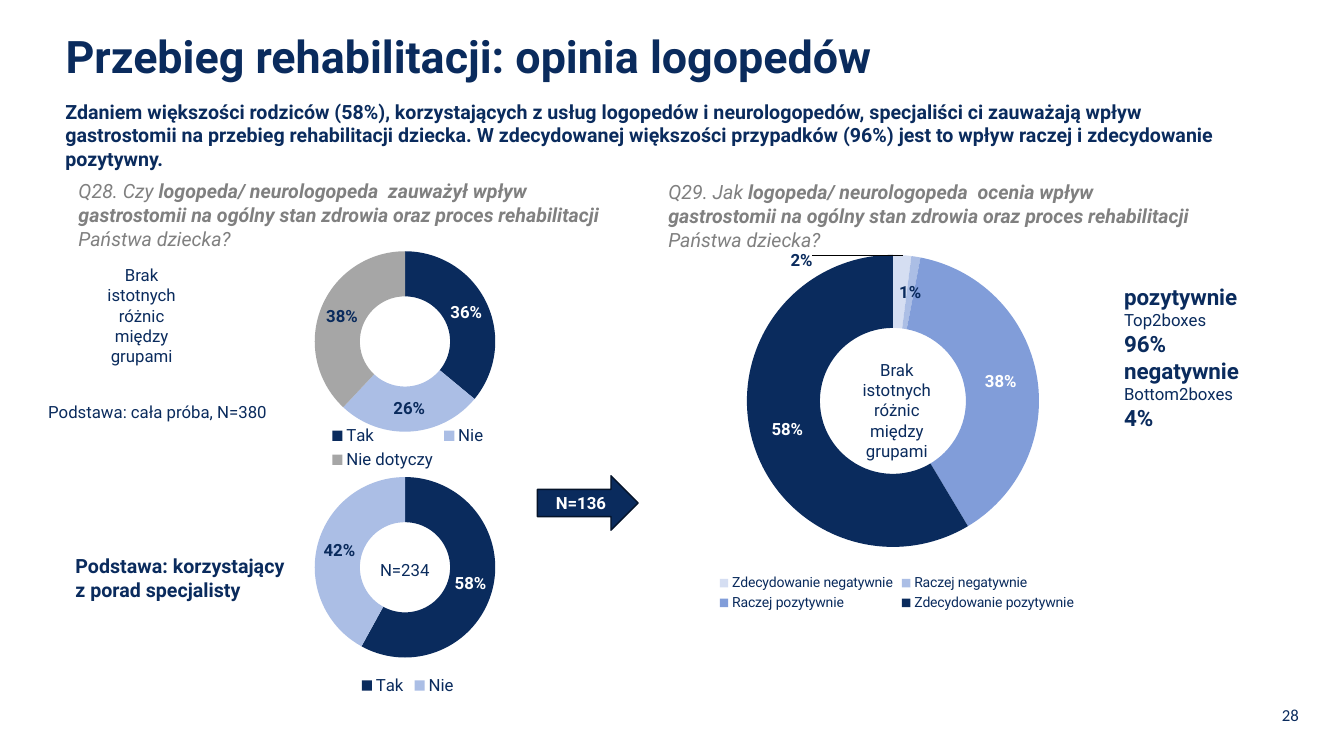
from lxml.etree import SubElement
from pptx import Presentation
from pptx.chart.data import CategoryChartData
from pptx.dml.color import RGBColor
from pptx.enum.chart import XL_CHART_TYPE, XL_LEGEND_POSITION
from pptx.enum.shapes import MSO_SHAPE
from pptx.enum.text import MSO_ANCHOR, PP_ALIGN
from pptx.oxml import parse_xml
from pptx.oxml.ns import nsdecls, qn
from pptx.util import Emu, Pt

PX = 9144
NAVY = RGBColor(0x0A, 0x2B, 0x5D)
EDGE = RGBColor(0x04, 0x13, 0x29)
GRAY = RGBColor(0x80, 0x80, 0x80)
SILVER = RGBColor(0xA6, 0xA6, 0xA6)
PALE = RGBColor(0xD5, 0xDE, 0xF2)
LIGHT = RGBColor(0xAB, 0xBE, 0xE5)
MEDIUM = RGBColor(0x81, 0x9D, 0xD9)
WHITE = RGBColor(0xFF, 0xFF, 0xFF)

LEFT, CENTER, RIGHT = PP_ALIGN.LEFT, PP_ALIGN.CENTER, PP_ALIGN.RIGHT
PLAIN = {"size": 12}
BOLD = {"size": 14, "bold": True}
BIG = {"size": 16, "bold": True}
ASK = {"size": 14, "color": GRAY, "italic": True}
ASK_BOLD = {**ASK, "bold": True}

TITLE = "Przebieg rehabilitacji: opinia logopedów"
SUMMARY = (
    "Zdaniem większości rodziców (58%), korzystających z usług logopedów i neurologopedów, "
    "specjaliści ci zauważają wpływ gastrostomii na przebieg rehabilitacji dziecka. "
    "W zdecydowanej większości przypadków (96%) jest to wpływ raczej i zdecydowanie pozytywny."
)
SUBJECT = " wpływ gastrostomii na ogólny stan zdrowia oraz proces rehabilitacji "
NO_DIFFERENCE = [[("Brak istotnych różnic między grupami", PLAIN)]]


def question(start, verb):
    return [[(start, ASK), ("logopeda/ neurologopeda  " + verb + SUBJECT, ASK_BOLD),
             ("Państwa dziecka?", ASK)]]


CHARTS = [
    ((668, 246, 443, 364), 10, [
        ("Zdecydowanie negatywnie", 0.02, PALE, NAVY),
        ("Raczej negatywnie", 0.01, LIGHT, NAVY),
        ("Raczej pozytywnie", 0.38, MEDIUM, WHITE),
        ("Zdecydowanie pozytywnie", 0.58, NAVY, WHITE)], {0: (-0.22, -0.085)}),
    ((240, 245, 329, 225), 12, [
        ("Tak", 0.36, NAVY, WHITE),
        ("Nie", 0.26, LIGHT, NAVY),
        ("Nie dotyczy", 0.38, SILVER, NAVY)], {}),
    ((240, 469, 329, 225), 12, [
        ("Tak", 0.58, NAVY, WHITE),
        ("Nie", 0.42, LIGHT, NAVY)], {}),
]
TEXTS = [
    ((55, 94, 1190, 81), LEFT, [[(SUMMARY, BOLD)]]),
    ((68, 173, 551, 81), LEFT, question("Q28. Czy ", "zauważył")),
    ((653, 174, 551, 81), LEFT, question("Q29. Jak ", "ocenia")),
    ((829, 352, 121, 91), CENTER, NO_DIFFERENCE),
    ((80, 258, 121, 91), CENTER, NO_DIFFERENCE),
    ((38, 394, 371, 30), LEFT, [[("Podstawa: cała próba, N=380", PLAIN)]]),
    ((341, 550, 121, 30), CENTER, [[("N=234", PLAIN)]]),
    ((65, 545, 257, 57), LEFT, [[("Podstawa: korzystający", BOLD)], [("z porad specjalisty", BOLD)]]),
    ((1105, 276, 160, 158), LEFT, [
        [("pozytywnie", BIG)], [("Top2boxes", PLAIN)], [("96%", BIG)],
        [("negatywnie", BIG)], [("Bottom2boxes", PLAIN)], [("4%", BIG)]]),
    ((998, 694, 300, 30), RIGHT, [[("28", {"size": 12, "name": "Calibri"})]]),
]


def place(box):
    return [Emu(length * PX) for length in box]


def style(font, values):
    values = {"name": "Roboto", "color": NAVY, "bold": False, **values}
    font.color.rgb = values.pop("color")
    values["size"] = Pt(values["size"])
    for name, value in values.items():
        setattr(font, name, value)


def write(frame, align, lines):
    frame.word_wrap = True
    for index, spans in enumerate(lines):
        para = frame.add_paragraph() if index else frame.paragraphs[0]
        para.alignment = align
        for text, values in spans:
            span = para.add_run()
            span.text = text
            style(span.font, values)


def manual_layout(**values):
    layout = parse_xml(f"<c:layout {nsdecls('c')}/>")
    manual = SubElement(layout, qn("c:manualLayout"))
    for name, value in values.items():
        SubElement(manual, qn("c:" + name)).set("val", str(value))
    return layout


def add_doughnut(page, box, legend_size, slices, shifts):
    data = CategoryChartData(number_format="0%")
    data.categories = [name for name, *rest in slices]
    data.add_series("Odpowiedzi", [value for name, value, *rest in slices])
    chart = page.shapes.add_chart(XL_CHART_TYPE.DOUGHNUT, *place(box), data).chart
    style(chart.font, {"size": 10, "name": "Calibri"})
    chart.has_title = False
    chart.has_legend = True
    chart.legend.position = XL_LEGEND_POSITION.BOTTOM
    chart.legend.include_in_layout = False
    style(chart.legend.font, {"size": legend_size})
    area = chart.plots[0]._element.getparent()
    for old in area.findall(qn("c:layout")):
        area.remove(old)
    area.insert(0, manual_layout(layoutTarget="inner", xMode="edge", yMode="edge",
                                 x=0.151, y=0.019, w=0.681, h=0.796))
    chart.plots[0].vary_by_categories = True
    series = chart.plots[0].series[0]
    labels = series.data_labels
    labels.show_value = True
    labels.number_format = "0%"
    labels.number_format_is_linked = False
    style(labels.font, {"size": 12, "bold": True})
    for index, (name, value, fill, ink) in enumerate(slices):
        point = series.points[index]
        point.format.fill.solid()
        point.format.fill.fore_color.rgb = fill
        style(point.data_label.font, {"size": 12, "bold": True, "color": ink})
    for index, (x, y) in shifts.items():
        label = labels._element.findall(qn("c:dLbl"))[index]
        label.insert(1, manual_layout(x=x, y=y))


def main():
    deck = Presentation()
    deck.slide_width, deck.slide_height = place((1333, 750))
    page = deck.slides.add_slide(deck.slide_layouts[5])

    title = page.shapes.title
    title.left, title.top, title.width, title.height = place((55, 29, 1037, 64))
    write(title.text_frame, LEFT, [[(TITLE, {"size": 32, "bold": True})]])
    title.text_frame.vertical_anchor = MSO_ANCHOR.TOP
    title.text_frame.paragraphs[0].line_spacing = 0.9

    for chart in CHARTS:
        add_doughnut(page, *chart)

    for box, align, lines in TEXTS:
        write(page.shapes.add_textbox(*place(box)).text_frame, align, lines)

    arrow = page.shapes.add_shape(MSO_SHAPE.RIGHT_ARROW, *place((533, 472, 100, 54)))
    arrow.shadow.inherit = False
    arrow.fill.solid()
    arrow.fill.fore_color.rgb = NAVY
    arrow.line.color.rgb = EDGE
    arrow.line.width = Pt(1)
    arrow.text_frame.vertical_anchor = MSO_ANCHOR.MIDDLE
    write(arrow.text_frame, CENTER, [[("N=136", {"size": 12, "bold": True, "color": WHITE})]])

    deck.save("out.pptx")


if __name__ == "__main__":
    main()
